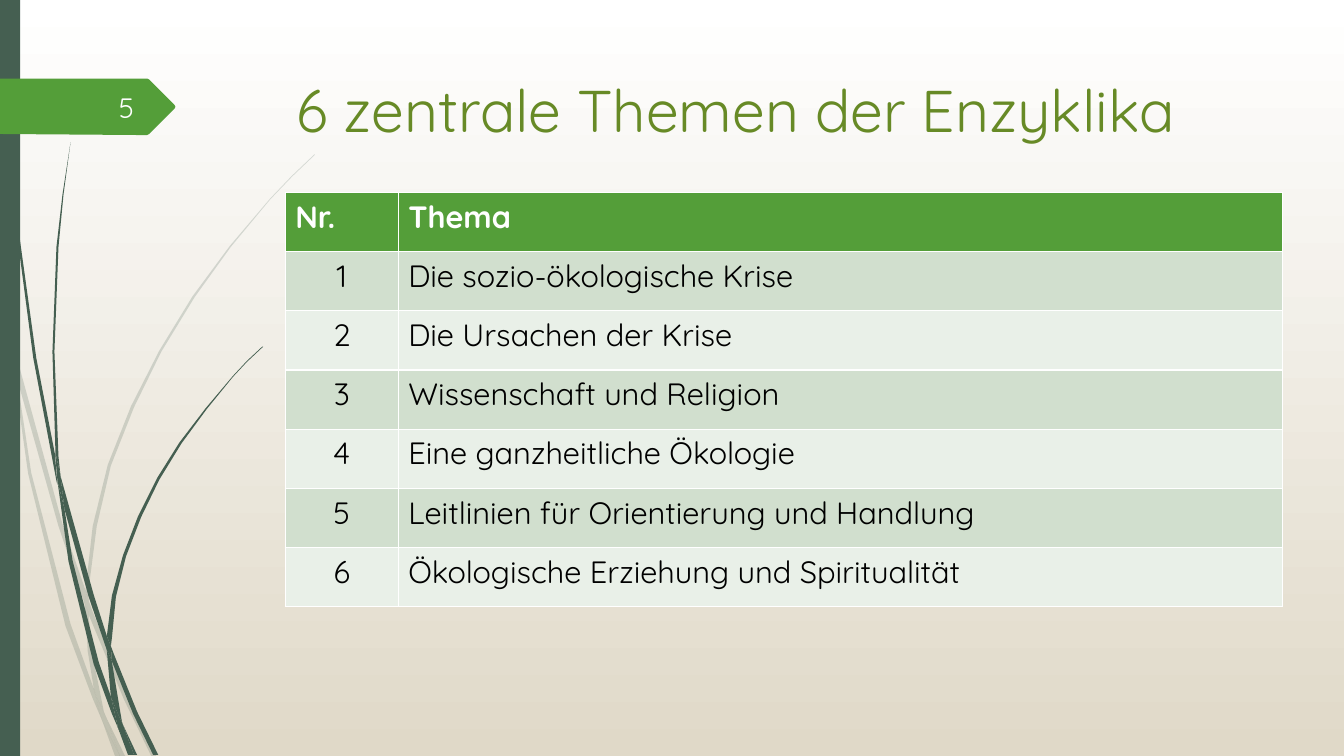
from lxml.etree import SubElement
from pptx import Presentation
from pptx.dml.color import RGBColor
from pptx.enum.shapes import MSO_SHAPE
from pptx.enum.text import MSO_ANCHOR, PP_ALIGN
from pptx.oxml.ns import qn
from pptx.util import Inches, Pt

FONT = "Quicksand"
COLORS = {
    "stem": "455F51", "leaf": "549E39", "title": "678A26",
    "sky": "FFFFFF", "sand": "E0D9C8", "page": "FEFFFF",
    "header": "FFFFFF", "body": "000000", "odd": "D1DFCE", "even": "E9F0E8",
}

PALE_BLADES = [
    [(0.11, 3.5), (0.09, 3.22), (0, 2.82), (0, 2.99), (0.1, 3.44)],
    [(0.58, 5.22), (0.84, 5.99), (0.85, 5.86), (0.62, 5.2), (0.14, 3.45), (0.17, 3.76)],
    [(0.92, 6.07), (0.88, 5.96), (0.88, 6.1), (1.23, 6.94), (1.5, 7.5), (1.55, 7.5), (1.27, 6.92)],
    [(1.19, 7.5), (1.24, 7.5), (1.05, 7.11)],
    [(0.93, 6.83), (0.7, 6.19), (0.31, 4.69), (0.17, 3.76), (0.11, 3.5), (0.28, 4.7),
     (0.65, 6.21), (0.92, 6.93), (1.01, 7.14), (0.99, 7.07)],
    [(0.84, 5.99), (0.87, 6.46), (0.93, 6.83), (0.96, 6.92), (1.05, 7.11), (1.03, 7.06),
     (0.91, 6.46), (0.88, 6.1), (0.88, 6.08)],
    [(0.88, 5.84), (0.96, 5.22), (1.1, 4.62), (1.33, 4.04), (1.6, 3.49), (1.93, 2.95), (2.29, 2.45),
     (2.68, 1.98), (2.9, 1.75), (3.12, 1.54), (3.12, 1.53), (2.89, 1.75), (2.68, 1.97),
     (2.28, 2.44), (1.91, 2.94), (1.58, 3.48), (1.3, 4.03), (1.07, 4.61), (0.92, 5.22),
     (0.85, 5.84), (0.85, 5.86), (0.88, 5.96)],
    [(1.01, 7.14), (1.14, 7.5), (1.19, 7.5)],
    [(0.88, 6.08), (0.88, 6.1), (0.88, 5.96), (0.85, 5.86), (0.84, 5.99)],
    [(0.96, 6.92), (0.93, 6.83), (0.99, 7.07), (1.01, 7.14), (1.19, 7.5), (1.05, 7.11)],
]

DARK_BLADES = [
    [(0.07, 1.1), (0.17, 2.33), (0.33, 3.55), (0.56, 4.77), (0.57, 4.81), (0.55, 4.57),
     (0.55, 4.53), (0.36, 3.55), (0.19, 2.32), (0.08, 1.09), (0.05, 0.48), (0.04, 0),
     (0.03, 0), (0.04, 0.48)],
    [(0.88, 5.92), (1.06, 6.45), (1.06, 6.31), (0.93, 5.9), (0.6, 4.72), (0.64, 5.05)],
    [(1.13, 6.49), (1.1, 6.41), (1.11, 6.56), (1.32, 7.08), (1.52, 7.49), (1.57, 7.49), (1.36, 7.06)],
    [(1.1, 6.91), (0.98, 6.57), (0.72, 5.56), (0.64, 5.05), (0.57, 4.77), (0.68, 5.57),
     (0.93, 6.59), (1.11, 7.08), (1.17, 7.22), (1.16, 7.17)],
    [(0.6, 4.72), (0.58, 4.53), (0.54, 3.49), (0.58, 2.45), (0.63, 1.93), (0.7, 1.41),
     (0.62, 1.93), (0.56, 2.45), (0.52, 3.49), (0.55, 4.49)],
    [(1.33, 7.49), (1.36, 7.49), (1.22, 7.19)],
    [(0.57, 4.77), (0.64, 5.05), (0.6, 4.72), (0.55, 4.49), (0.55, 4.53)],
    [(1.11, 6.33), (1.15, 5.92), (1.25, 5.52), (1.4, 5.13), (1.58, 4.76), (1.8, 4.4), (2.05, 4.06),
     (2.31, 3.74), (2.45, 3.59), (2.61, 3.44), (2.6, 3.44), (2.45, 3.58), (2.31, 3.73),
     (2.04, 4.05), (1.78, 4.39), (1.56, 4.74), (1.37, 5.12), (1.22, 5.51), (1.11, 5.91),
     (1.06, 6.31), (1.1, 6.41)],
    [(1.17, 7.22), (1.27, 7.49), (1.31, 7.49)],
    [(1.06, 6.45), (1.1, 6.91), (1.16, 7.06), (1.22, 7.19), (1.21, 7.16), (1.11, 6.56), (1.09, 6.51)],
    [(1.06, 6.45), (1.09, 6.51), (1.11, 6.56), (1.1, 6.41), (1.06, 6.31)],
    [(1.16, 7.06), (1.1, 6.91), (1.16, 7.17), (1.17, 7.22), (1.3, 7.49), (1.33, 7.49), (1.22, 7.19)],
]

PAGE_TAG = [(1.73, 1.08), (1.48, 1.33), (1.46, 1.34), (1.36, 1.34), (0, 1.33), (0, 0.78),
            (1.46, 0.78), (1.48, 0.79), (1.73, 1.04), (1.74, 1.06)]

TOPICS = [
    "Die sozio-ökologische Krise",
    "Die Ursachen der Krise",
    "Wissenschaft und Religion",
    "Eine ganzheitliche Ökologie",
    "Leitlinien für Orientierung und Handlung",
    "Ökologische Erziehung und Spiritualität",
]


class SlideBuilder:
    def __init__(self, slide, font, colors):
        self.slide = slide
        self.shapes = slide.shapes
        self.font = font
        self.colors = colors

    def rgb(self, color):
        return RGBColor.from_string(self.colors[color])

    def background(self, top, bottom):
        fill = self.slide.background.fill
        fill.gradient()
        fill.gradient_angle = 270
        for stop, color in zip(fill.gradient_stops, (top, bottom)):
            stop.color.rgb = self.rgb(color)

    def paint(self, shape, color, opacity=100):
        shape.shadow.inherit = False
        shape.line.fill.background()
        shape.fill.solid()
        shape.fill.fore_color.rgb = self.rgb(color)
        if opacity < 100:
            tint = shape.element.spPr.find(qn("a:solidFill"))[0]
            SubElement(tint, qn("a:alpha")).set("val", str(opacity * 1000))

    def outline(self, points, color, opacity=100):
        corners = [(Inches(x), Inches(y)) for x, y in points]
        builder = self.shapes.build_freeform(*corners[0])
        builder.add_line_segments(corners[1:], close=True)
        self.paint(builder.convert_to_shape(), color, opacity)

    def bar(self, left, top, width, height, color):
        box = map(Inches, (left, top, width, height))
        self.paint(self.shapes.add_shape(MSO_SHAPE.RECTANGLE, *box), color)

    def fill_text(self, frame, text, size, color, align=PP_ALIGN.LEFT, bold=False):
        frame.text = text
        paragraph = frame.paragraphs[0]
        paragraph.alignment = align
        font = paragraph.runs[0].font
        font.name, font.size, font.bold = self.font, Pt(size), bold
        font.color.rgb = self.rgb(color)

    def text(self, left, top, width, height, text, size, color,
             align=PP_ALIGN.LEFT, anchor=MSO_ANCHOR.TOP):
        frame = self.shapes.add_textbox(*map(Inches, (left, top, width, height))).text_frame
        frame.word_wrap = True
        frame.vertical_anchor = anchor
        self.fill_text(frame, text, size, color, align)

    def table(self, left, top, widths, height, rows, size):
        box = map(Inches, (left, top, sum(widths), height))
        table = self.shapes.add_table(len(rows), len(widths), *box).table
        for column, width in zip(table.columns, widths):
            column.width = Inches(width)
        for r, row in enumerate(rows):
            header = r == 0
            fill = "leaf" if header else "odd" if r % 2 else "even"
            for c, text in enumerate(row):
                cell = table.cell(r, c)
                cell.fill.solid()
                cell.fill.fore_color.rgb = self.rgb(fill)
                align = PP_ALIGN.LEFT if header or c else PP_ALIGN.CENTER
                color = "header" if header else "body"
                self.fill_text(cell.text_frame, text, size, color, align, header)


def main():
    deck = Presentation()
    deck.slide_width, deck.slide_height = Inches(13.33), Inches(7.5)
    page = SlideBuilder(deck.slides.add_slide(deck.slide_layouts[6]), FONT, COLORS)

    page.background("sky", "sand")
    for blades, opacity in ((PALE_BLADES, 20), (DARK_BLADES, 100)):
        for blade in blades:
            page.outline(blade, "stem", opacity)
    page.bar(0, 0, 0.2, 7.5, "stem")
    page.outline(PAGE_TAG, "leaf")

    page.text(2.84, 0.68, 9.75, 0.92, "6 zentrale Themen der Enzyklika", 42, "title")
    numbered = [(str(number), topic) for number, topic in enumerate(TOPICS, 1)]
    page.table(2.83, 1.91, (1.12, 8.77), 4.11, [("Nr.", "Thema"), *numbered], 22)
    page.text(0.58, 0.86, 0.85, 0.4, "5", 20, "page", PP_ALIGN.RIGHT, MSO_ANCHOR.MIDDLE)

    deck.save("out.pptx")


if __name__ == "__main__":
    main()
